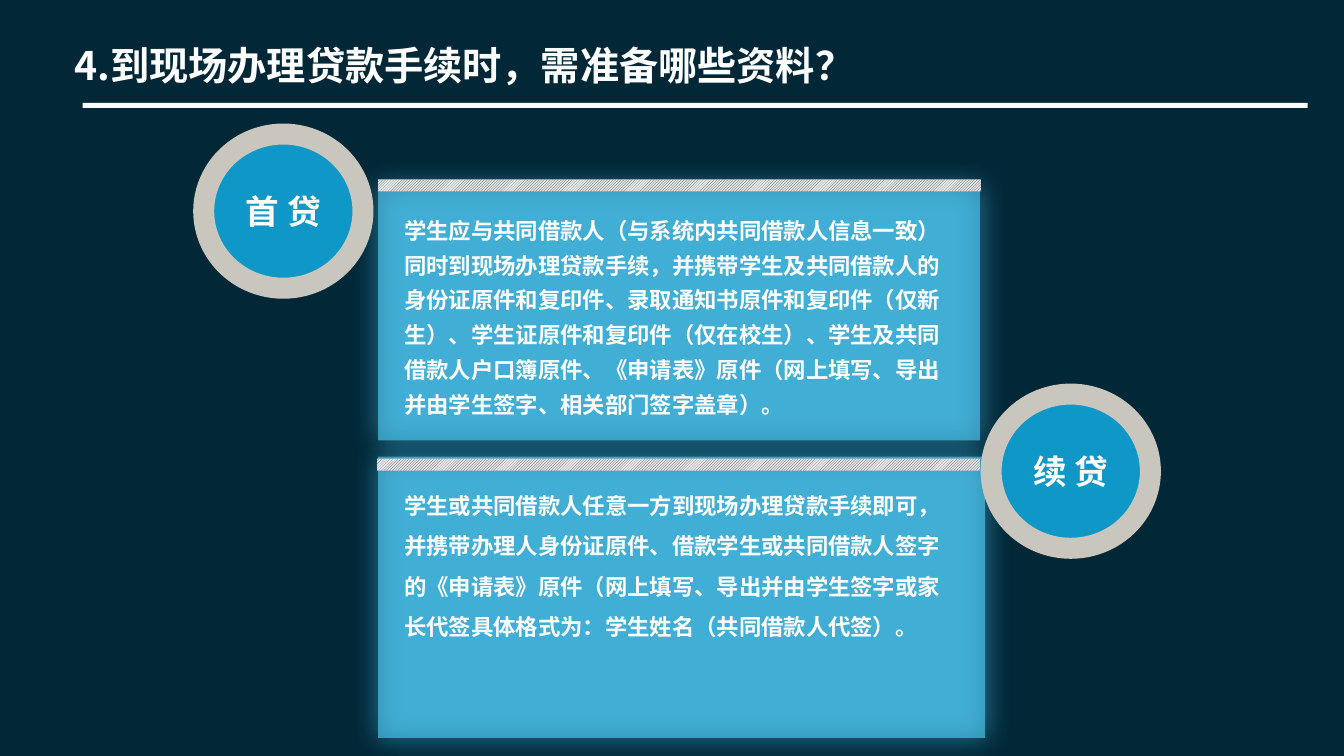
from lxml import etree
from pptx import Presentation
from pptx.dml.color import RGBColor
from pptx.enum.dml import MSO_PATTERN
from pptx.enum.shapes import MSO_SHAPE as Shape
from pptx.enum.text import MSO_ANCHOR as Anchor, MSO_AUTO_SIZE as AutoSize, PP_ALIGN as Align
from pptx.oxml.ns import qn
from pptx.util import Inches, Pt

# Content
TITLE = "4.到现场办理贷款手续时，需准备哪些资料？"
FIRST_LOAN = (
    "学生应与共同借款人（与系统内共同借款人信息一致）同时到现场办理贷款手续，"
    "并携带学生及共同借款人的身份证原件和复印件、录取通知书原件和复印件（仅新生）、"
    "学生证原件和复印件（仅在校生）、学生及共同借款人户口簿原件、"
    "《申请表》原件（网上填写、导出并由学生签字、相关部门签字盖章）。"
)
RENEWAL = (
    "学生或共同借款人任意一方到现场办理贷款手续即可，并携带办理人身份证原件、"
    "借款学生或共同借款人签字的《申请表》原件（网上填写、导出并由学生签字或"
    "家长代签具体格式为：学生姓名（共同借款人代签）。"
)

# Boxes are left, top, width, height in inches
TITLE_BOX = (0.64, 0.36, 12.4, 0.57)
RULE_BOX = (0.82, 1.02, 12.15, 0.05)
PANELS = [(3.75, 4.53, 6.02, 2.79), (3.75, 1.85, 5.97, 2.52)]
STRIPS = [(3.74, 4.55, 5.98, 0.12), (3.75, 1.78, 5.98, 0.12)]
# Badge label, badge corner, text, text box, line spacing
SECTIONS = [
    ("首 贷", (2.02, 1.33), FIRST_LOAN, (3.93, 2.03, 5.67, 2.15), 1.3),
    ("续 贷", (9.83, 3.91), RENEWAL, (3.93, 4.71, 5.6, 1.7), 1.5),
]
BADGE_SIZE = (1.58, 1.53)

FONT = "Noto Sans CJK SC"
NAVY = RGBColor(0x02, 0x28, 0x38)
WHITE = RGBColor(0xFF, 0xFF, 0xFF)
SKY = RGBColor(0x53, 0xD2, 0xFF)
BLUE = RGBColor(0x0F, 0x97, 0xC7)
STONE = RGBColor(0xC8, 0xC6, 0xBD)
HATCH = RGBColor(0x41, 0x44, 0x55)
PALE = RGBColor(0xE8, 0xE8, 0xE6)


def add_shape(kind, box, fill=None):
    shape = page.shapes.add_shape(kind, *map(Inches, box))
    shape.shadow.inherit = False
    shape.line.fill.background()
    if fill is not None:
        shape.fill.solid()
        shape.fill.fore_color.rgb = fill
    return shape


def set_alpha(color, percent):
    etree.SubElement(color, qn("a:alpha"), val=str(percent * 1000))


def add_glow(shape):
    effects = shape.element.spPr.find(qn("a:effectLst"))
    shadow = etree.SubElement(effects, qn("a:outerShdw"), blurRad=str(Pt(20)),
                              dist="0", dir="0", algn="ctr", rotWithShape="0")
    color = etree.SubElement(shadow, qn("a:srgbClr"), val=str(SKY))
    set_alpha(color, 80)


def write(frame, text, size, tight=True):
    frame.word_wrap = True
    if tight:
        frame.margin_left = frame.margin_right = Inches(0.08)
        frame.margin_top = frame.margin_bottom = Inches(0.04)
    para = frame.paragraphs[0]
    para.text = text
    para.font.size = Pt(size)
    para.font.bold = True
    para.font.color.rgb = WHITE
    para.font.name = FONT
    # East Asian typeface
    properties = para.font.fill._xPr
    etree.SubElement(properties, qn("a:ea"), typeface=FONT)
    return para


def add_text(box, text, size, tight=True):
    frame = page.shapes.add_textbox(*map(Inches, box)).text_frame
    para = write(frame, text, size, tight)
    frame.auto_size = AutoSize.SHAPE_TO_FIT_TEXT
    return para


deck = Presentation()
deck.slide_width, deck.slide_height = Inches(13.33), Inches(7.5)
page = deck.slides.add_slide(deck.slide_layouts[6])
page.background.fill.solid()
page.background.fill.fore_color.rgb = NAVY

# Title and rule
add_text(TITLE_BOX, TITLE, 28, tight=False)
add_shape(Shape.RECTANGLE, RULE_BOX, WHITE)

# Glowing panels
for box in PANELS:
    panel = add_shape(Shape.RECTANGLE, box, SKY)
    set_alpha(panel.element.spPr.find(qn("a:solidFill")).find(qn("a:srgbClr")), 60)
    add_glow(panel)

# Hatched strips
for box in STRIPS:
    strip = add_shape(Shape.RECTANGLE, box)
    strip.fill.patterned()
    strip.fill.pattern = MSO_PATTERN.LIGHT_UPWARD_DIAGONAL
    strip.fill.fore_color.rgb = HATCH
    strip.fill.back_color.rgb = PALE

# Badges and their texts
for label, corner, text, box, spacing in SECTIONS:
    badge = add_shape(Shape.OVAL, corner + BADGE_SIZE, BLUE)
    badge.line.color.rgb = STONE
    badge.line.width = Pt(15)
    badge.text_frame.vertical_anchor = Anchor.MIDDLE
    write(badge.text_frame, label, 24).alignment = Align.CENTER
    add_text(box, text, 16).line_spacing = spacing

deck.save("out.pptx")
